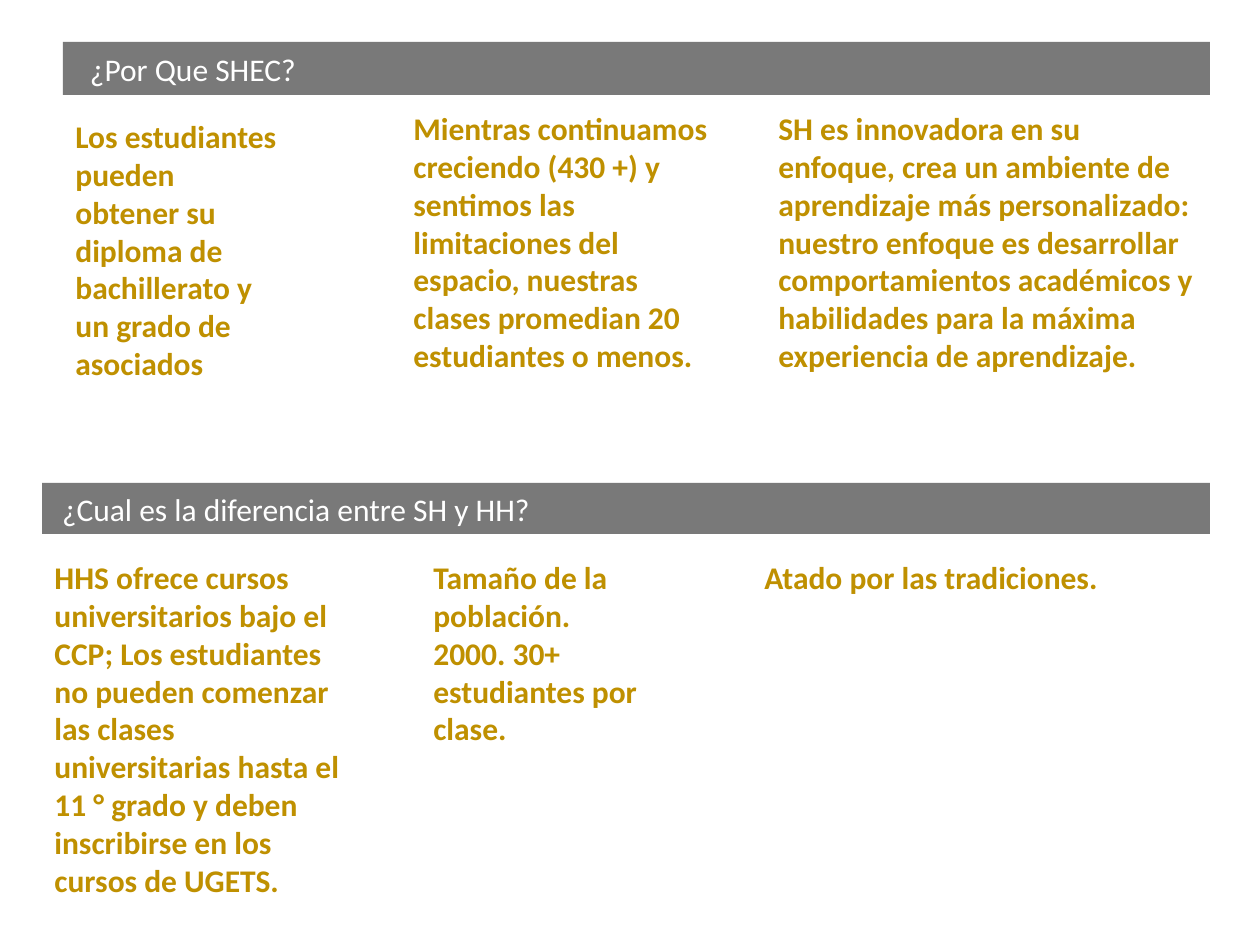
from lxml.etree import SubElement
from pptx import Presentation
from pptx.dml.color import RGBColor
from pptx.enum.shapes import MSO_SHAPE
from pptx.enum.text import MSO_ANCHOR, PP_ALIGN
from pptx.oxml.ns import qn
from pptx.util import Pt


def px(length):
    return round(length * 914400 / 126)


def add_text(para, text, color, bold):
    para.alignment = PP_ALIGN.LEFT
    span = para.add_run()
    span.text = text
    span.font.name = "Calibri"
    span.font.size = Pt(18)
    span.font.bold = bold
    span.font.color.rgb = RGBColor.from_string(color)


deck = Presentation()
deck.slide_width = px(1260)
deck.slide_height = px(945)
page = deck.slides.add_slide(deck.slide_layouts[6])

headings = [
    ("¿Por Que SHEC?", 63, 42, 1147, 53, 27),
    ("¿Cual es la diferencia entre SH y HH?", 42, 483, 1168, 51, 20),
]
for text, left, top, width, height, inset in headings:
    bar = page.shapes.add_shape(
        MSO_SHAPE.RECTANGLE, px(left), px(top), px(width), px(height)
    )
    bar.shadow.inherit = False
    bar.line.fill.background()
    bar.fill.solid()
    bar.fill.fore_color.rgb = RGBColor.from_string("0C0C0C")
    fill_color = bar.fill._xPr.find(qn("a:solidFill")).find(qn("a:srgbClr"))
    SubElement(fill_color, qn("a:alpha"), val="55000")
    frame = bar.text_frame
    frame.word_wrap = True
    frame.vertical_anchor = MSO_ANCHOR.MIDDLE
    frame.margin_left = px(inset)
    add_text(frame.paragraphs[0], text, "FFFFFF", False)

columns = [
    (63, 111, 231, 290, [
        "Los estudiantes pueden obtener su diploma de bachillerato y un grado "
        "de asociados",
    ]),
    (401, 103, 324, 349, [
        "Mientras continuamos creciendo (430 +) y sentimos las limitaciones del "
        "espacio, nuestras clases promedian 20 estudiantes o menos.",
    ]),
    (766, 103, 444, 349, [
        "SH es innovadora en su enfoque, crea un ambiente de aprendizaje más "
        "personalizado: nuestro enfoque es desarrollar comportamientos "
        "académicos y habilidades para la máxima experiencia de aprendizaje.",
    ]),
    (42, 552, 324, 369, [
        "HHS ofrece cursos universitarios bajo el CCP; Los estudiantes no pueden "
        "comenzar las clases universitarias hasta el 11 ° grado y deben "
        "inscribirse en los cursos de UGETS.",
    ]),
    (421, 552, 262, 354, [
        "Tamaño de la población.",
        "2000. 30+ estudiantes por clase.",
    ]),
    (752, 552, 378, 354, ["Atado por las tradiciones."]),
]
for left, top, width, height, lines in columns:
    box = page.shapes.add_textbox(px(left), px(top), px(width), px(height))
    frame = box.text_frame
    frame.word_wrap = True
    for index, line in enumerate(lines):
        para = frame.add_paragraph() if index else frame.paragraphs[0]
        add_text(para, line, "BF9000", True)

deck.save("out.pptx")
